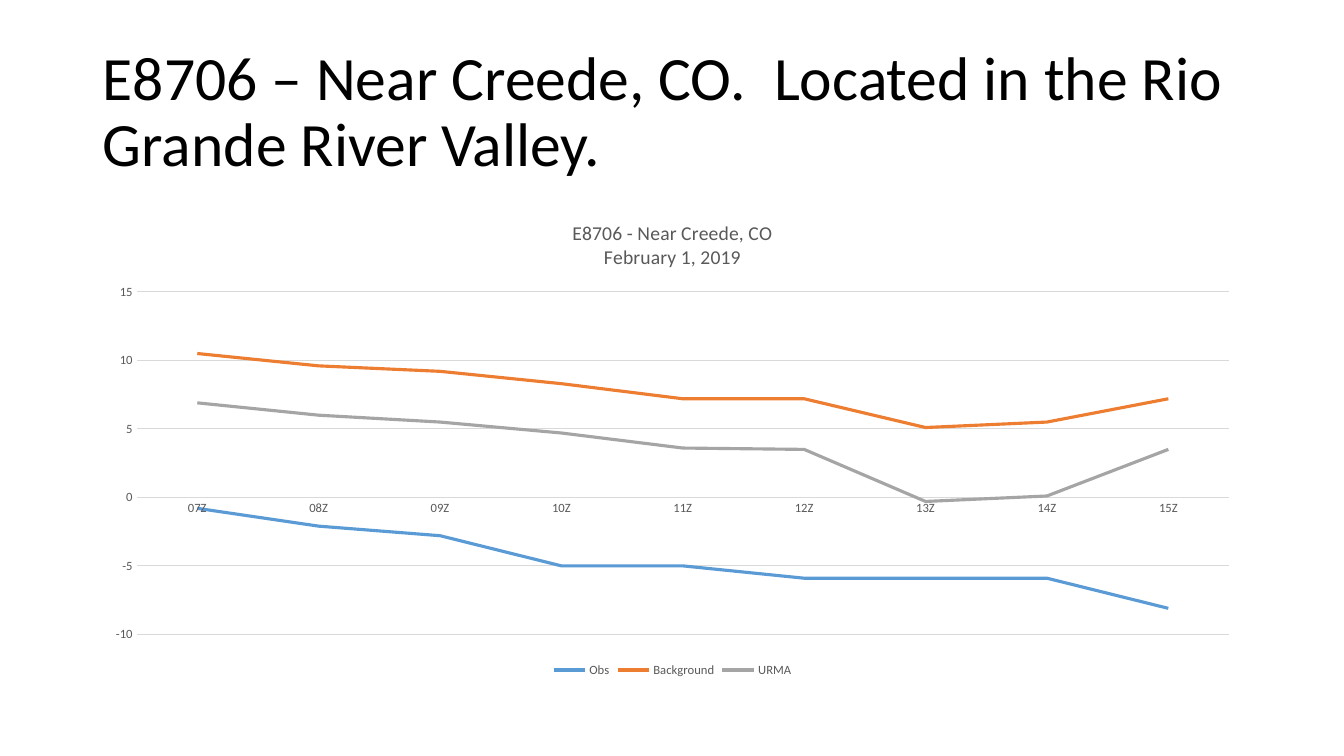
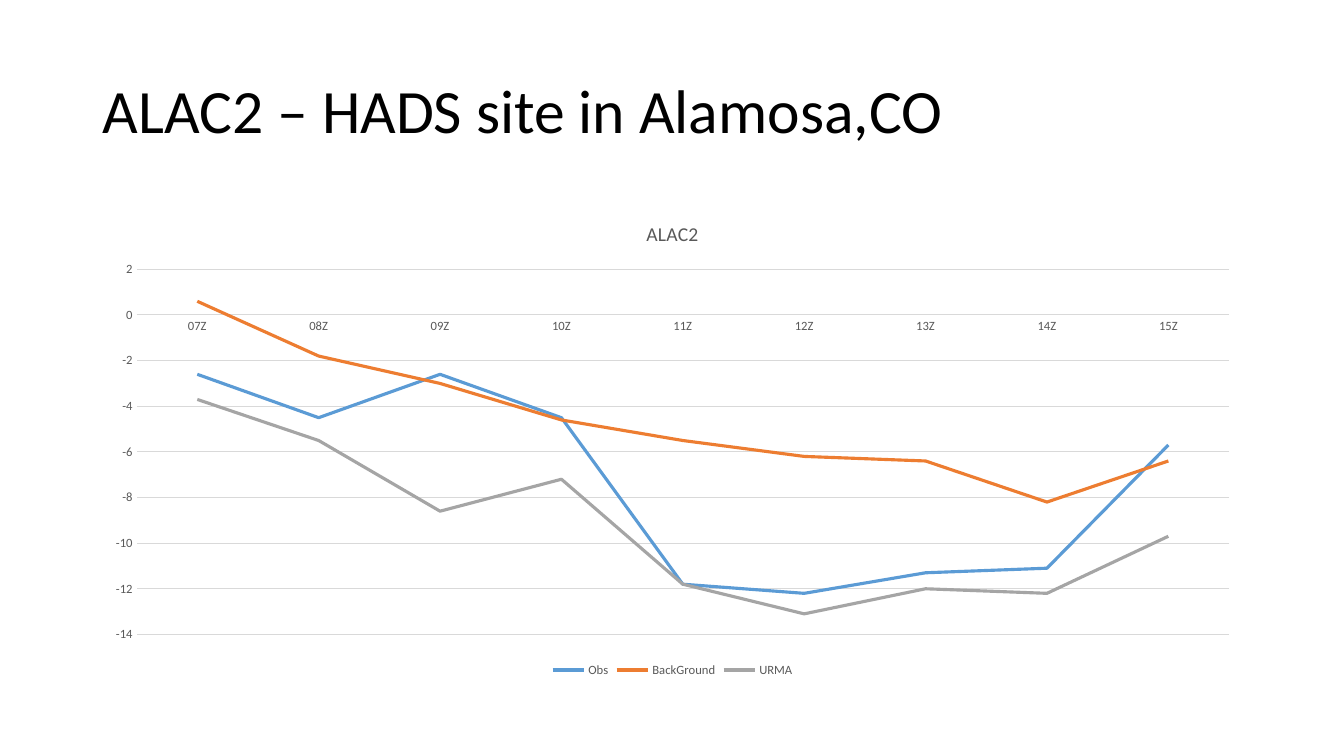
from pptx import Presentation
from pptx.chart.data import CategoryChartData
from pptx.dml.color import RGBColor
from pptx.enum.chart import XL_CHART_TYPE, XL_LEGEND_POSITION, XL_TICK_MARK
from pptx.enum.text import MSO_ANCHOR, PP_ALIGN
from pptx.util import Inches, Pt

FONT = "Calibri"
BLACK, GRAY, LIGHT = "000000", "595959", "D9D9D9"
SERIES_COLORS = ["5B9BD5", "ED7D31", "A5A5A5"]
LEFT, WIDTH = Inches(0.92), Inches(11.5)
HOURS = [f"{hour:02}Z" for hour in range(7, 16)]

# Each station: slide title, chart title lines, axis (min, max, step), series
STATIONS = [
    ("E8706 – Near Creede, CO.  Located in the Rio Grande River Valley.",
     ["E8706 - Near Creede, CO", "February 1, 2019"],
     (-10, 15, 5),
     {"Obs": [-0.8, -2.1, -2.8, -5, -5, -5.9, -5.9, -5.9, -8.1],
      "Background": [10.5, 9.6, 9.2, 8.3, 7.2, 7.2, 5.1, 5.5, 7.2],
      "URMA": [6.9, 6, 5.5, 4.7, 3.6, 3.5, -0.3, 0.1, 3.5]}),
    ("ALAC2 – HADS site in Alamosa,CO",
     ["ALAC2"],
     (-14, 2, 2),
     {"Obs": [-2.6, -4.5, -2.6, -4.5, -11.8, -12.2, -11.3, -11.1, -5.7],
      "BackGround": [0.6, -1.8, -3, -4.6, -5.5, -6.2, -6.4, -8.2, -6.4],
      "URMA": [-3.7, -5.5, -8.6, -7.2, -11.8, -13.1, -12, -12.2, -9.7]}),
]


def style_font(font, size, color):
    font.name, font.size, font.bold = FONT, Pt(size), False
    font.color.rgb = RGBColor.from_string(color)


def style_line(line, color, width):
    line.color.rgb = RGBColor.from_string(color)
    line.width = Pt(width)


prs = Presentation()
prs.slide_width, prs.slide_height = Inches(13.33), Inches(7.5)

for title, chart_title, (low, high, step), series in STATIONS:
    s = prs.slides.add_slide(prs.slide_layouts[5])

    # Slide title
    sp = s.shapes.title
    sp.left, sp.top, sp.width, sp.height = LEFT, Inches(0.4), WIDTH, Inches(1.45)
    tf = sp.text_frame
    tf.vertical_anchor = MSO_ANCHOR.MIDDLE
    p = tf.paragraphs[0]
    p.alignment, p.line_spacing = PP_ALIGN.LEFT, 0.9
    r = p.add_run()
    r.text = title
    style_font(r.font, 44, BLACK)

    # Line chart
    data = CategoryChartData()
    data.categories = HOURS
    for name, values in series.items():
        data.add_series(name, values)
    chart = s.shapes.add_chart(XL_CHART_TYPE.LINE, LEFT, Inches(2), WIDTH,
                               Inches(4.76), data).chart
    style_font(chart.font, 10, BLACK)

    tf = chart.chart_title.text_frame
    chart.chart_title.include_in_layout = False
    for i, text in enumerate(chart_title):
        p = tf.add_paragraph() if i else tf.paragraphs[0]
        r = p.add_run()
        r.text = text
        style_font(r.font, 14, GRAY)

    chart.has_legend = True
    chart.legend.position = XL_LEGEND_POSITION.BOTTOM
    chart.legend.include_in_layout = False
    style_font(chart.legend.font, 9, GRAY)

    for axis in (chart.category_axis, chart.value_axis):
        axis.major_tick_mark = axis.minor_tick_mark = XL_TICK_MARK.NONE
        style_font(axis.tick_labels.font, 9, GRAY)
    style_line(chart.category_axis.format.line, LIGHT, 0.75)

    axis = chart.value_axis
    axis.minimum_scale, axis.maximum_scale, axis.major_unit = low, high, step
    axis.format.line.fill.background()
    style_line(axis.major_gridlines.format.line, LIGHT, 0.75)

    plot = chart.plots[0]
    plot.vary_by_categories = False
    for line, color in zip(plot.series, SERIES_COLORS):
        line.smooth = False
        style_line(line.format.line, color, 2.25)

prs.save("out.pptx")
